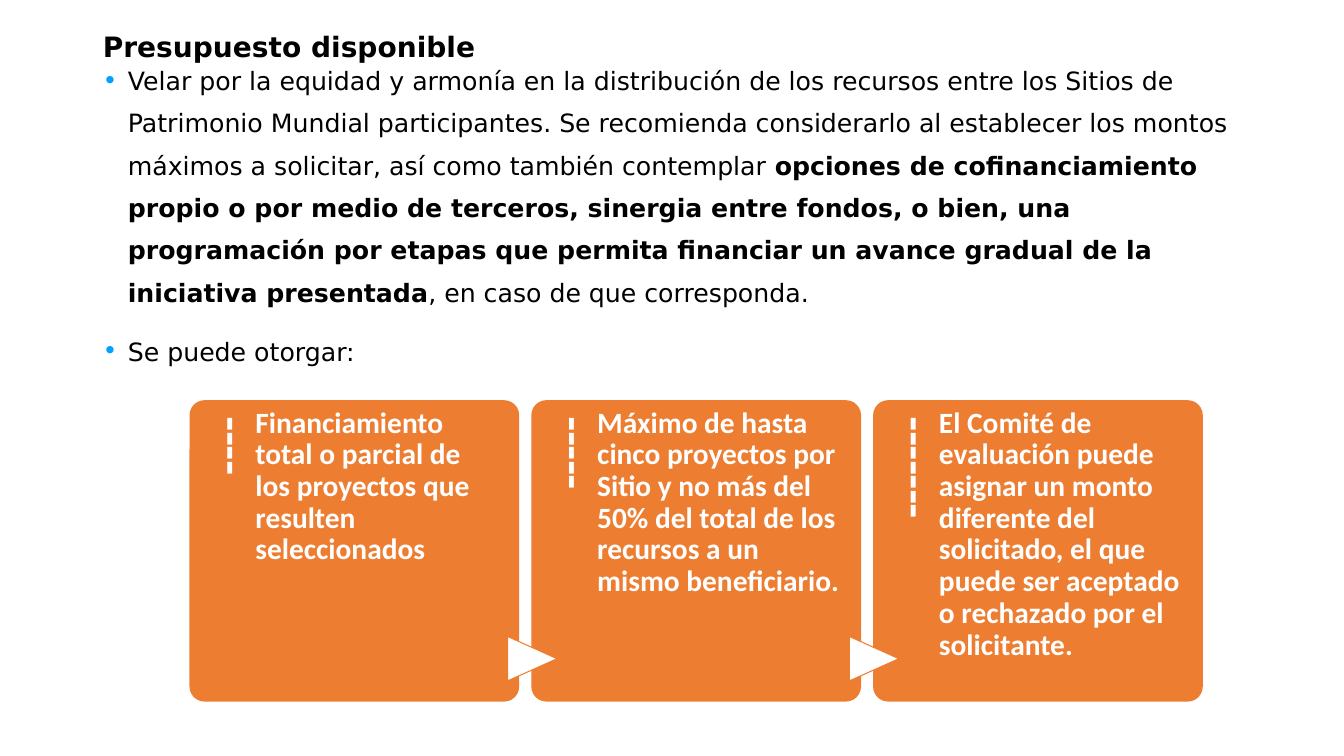
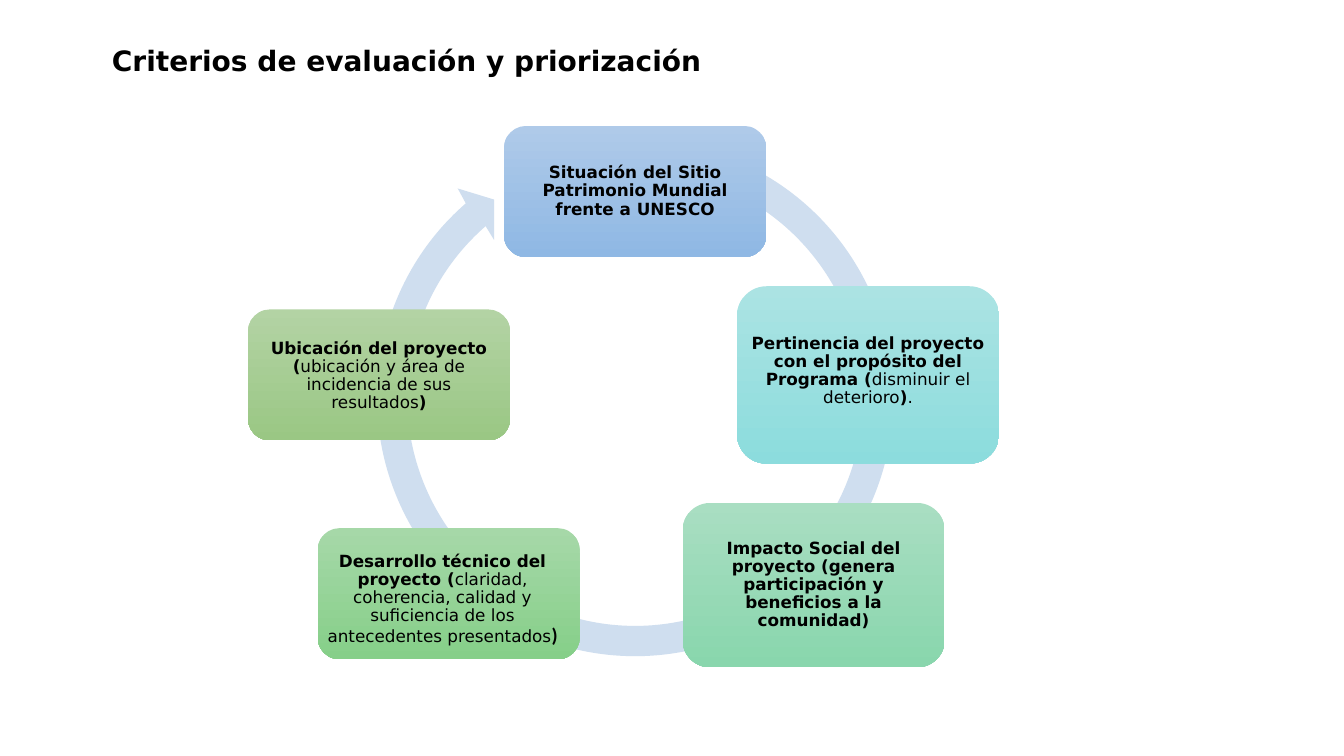
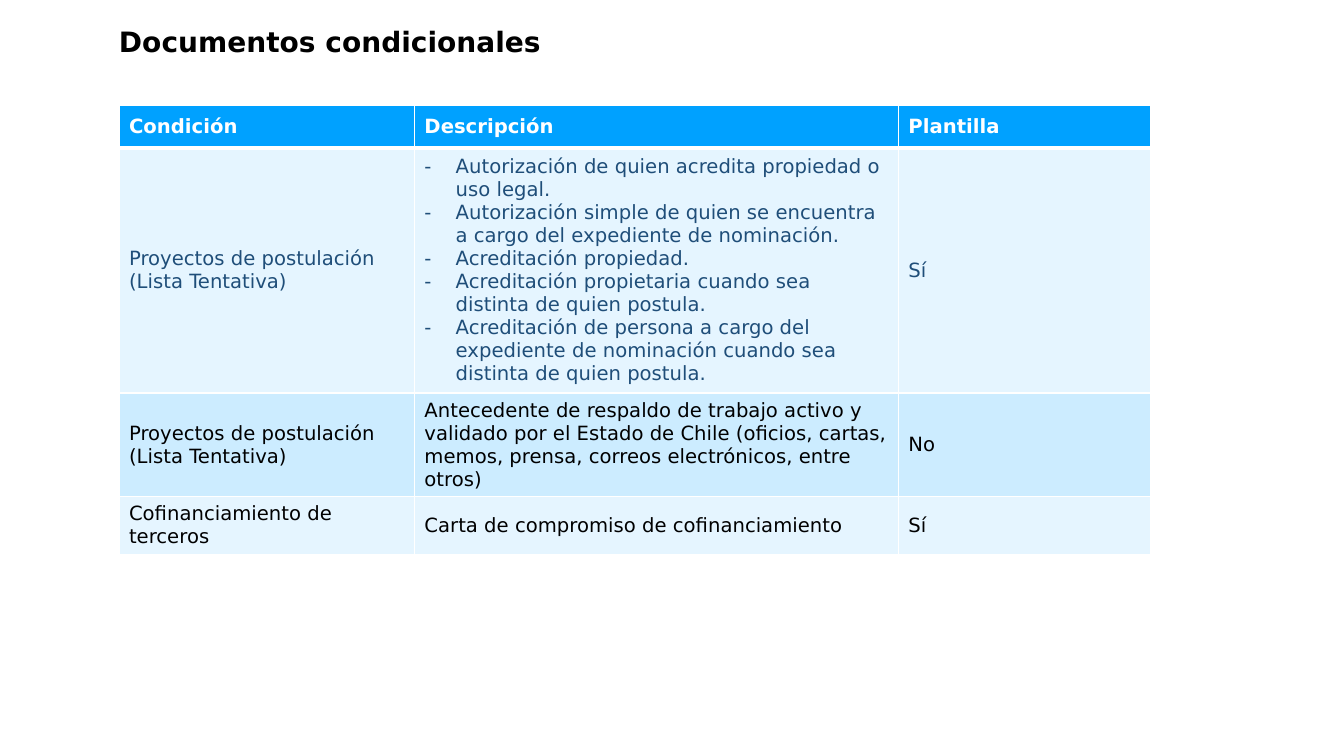
"""Build three slides on budget, evaluation criteria and conditional documents."""
from math import cos, radians, sin, tan

from lxml.etree import SubElement
from pptx import Presentation
from pptx.dml.color import RGBColor
from pptx.enum.shapes import MSO_SHAPE
from pptx.enum.text import MSO_ANCHOR, MSO_AUTO_SIZE, PP_ALIGN
from pptx.oxml import parse_xml
from pptx.oxml.ns import nsdecls, qn
from pptx.util import Inches, Pt

BLACK = RGBColor(0x00, 0x00, 0x00)
WHITE = RGBColor(0xFF, 0xFF, 0xFF)
ORANGE = RGBColor(0xED, 0x7D, 0x31)
BLUE = RGBColor(0x00, 0xA1, 0xFF)
NAVY = RGBColor(0x1F, 0x4E, 0x79)
PALE_BLUE = RGBColor(0xCF, 0xDE, 0xEF)
SANS, CALIBRI = "DejaVu Sans", "Calibri"

BUDGET_POINTS = [
    [("Velar por la equidad y armonía en la distribución de los recursos entre los Sitios de "
      "Patrimonio Mundial participantes. Se recomienda considerarlo al establecer los montos "
      "máximos a solicitar, así como también contemplar ", False),
     ("opciones de cofinanciamiento propio o por medio de terceros, sinergia entre fondos, o bien, "
      "una programación por etapas que permita financiar un avance gradual de la iniciativa "
      "presentada", True),
     (", en caso de que corresponda.", False)],
    [("Se puede otorgar:", False)],
]
FUNDING_CARDS = [
    ("----", "Financiamiento total o parcial de los proyectos que resulten seleccionados"),
    ("-----", "Máximo de hasta cinco proyectos por Sitio y no más del 50% del total de los recursos "
              "a un mismo beneficiario."),
    ("-------", "El Comité de evaluación puede asignar un monto diferente del solicitado, el que "
                "puede ser aceptado o rechazado por el solicitante."),
]
CRITERIA = [
    dict(at=(5, 1.25), height=1.3, side=0.06, shift=(0, 0), colors=("AFCAE9", "8FB8E4"),
         spans=[("Situación del Sitio Patrimonio Mundial frente a UNESCO", True)]),
    dict(at=(7.31, 2.84), height=1.76, side=0.03, shift=(0, -0.04), colors=("ABE3E3", "8CDCDD"),
         spans=[("Pertinencia del proyecto con el propósito del Programa (", True),
                ("disminuir el deterioro", False), (")", True), (".", False)]),
    dict(at=(6.77, 4.99), height=1.63, side=0.06, shift=(0, 0), colors=("A9DEC2", "89D6AD"),
         spans=[("Impacto Social del proyecto (genera participación y beneficios a la comunidad)",
                 True)]),
    dict(at=(3.15, 5.24), height=1.3, side=0.06, shift=(-0.06, 0.06), colors=("A6D8A8", "86CF89"),
         spans=[("Desarrollo técnico del proyecto (", True),
                ("claridad, coherencia, calidad y suficiencia de los antecedentes presentados",
                 False), (")", True, CALIBRI, 14)]),
    dict(at=(2.46, 3.07), height=1.3, side=0.06, shift=(0, 0.01), colors=("B3D3A4", "9AC784"),
         spans=[("Ubicación del proyecto (", True),
                ("ubicación y área de incidencia de sus resultados", False), (")", True)]),
]
CRITERION_WIDTH = 2.6
RING_CENTER, RING_OUTER, RING_INNER = (6.3, 3.95), 2.56, 2.26
RING_START, RING_END, RING_CURVES = -70, 229, 4
ARROW_HEAD = [(4.54, 1.87), (4.9, 1.98), (4.9, 2.38)]
UNITS_PER_INCH = 1000

APPLICATION = "Proyectos de postulación (Lista Tentativa)"
DOCUMENTS = [
    ("Condición", "Descripción", "Plantilla"),
    (APPLICATION, [
        "Autorización de quien acredita propiedad o uso legal.",
        "Autorización simple de quien se encuentra a cargo del expediente de nominación.",
        "Acreditación propiedad.",
        "Acreditación propietaria cuando sea distinta de quien postula.",
        "Acreditación de persona a cargo del expediente de nominación cuando sea distinta de quien "
        "postula."], "Sí"),
    (APPLICATION, "Antecedente de respaldo de trabajo activo y validado por el Estado de Chile "
                  "(oficios, cartas, memos, prensa, correos electrónicos, entre otros)", "No"),
    ("Cofinanciamiento de terceros", "Carta de compromiso de cofinanciamiento", "Sí"),
]
COLUMN_WIDTHS = (2.93, 4.8, 2.5)
ROW_HEIGHTS = (0.42, 2.43, 1.03, 0.57)
ROW_ALPHAS = (100, 10, 20, 10)
ROW_COLORS = (WHITE, NAVY, BLACK, BLACK)


def inches(*lengths):
    return [Inches(length) for length in lengths]


def set_frame(frame, left=0, top=0, right=0, bottom=0, anchor=MSO_ANCHOR.TOP):
    frame.word_wrap = True
    frame.auto_size = MSO_AUTO_SIZE.NONE
    frame.vertical_anchor = anchor
    frame.margin_left, frame.margin_top, frame.margin_right, frame.margin_bottom = inches(
        left, top, right, bottom)


def write(para, spans, size, color=BLACK, font=SANS, align=PP_ALIGN.LEFT, spacing=0.9):
    para.alignment = align
    para.line_spacing = spacing
    for text, bold, *special in spans:
        span = para.add_run()
        span.text = text
        span.font.name, points = special or (font, size)
        span.font.size = Pt(points)
        span.font.bold = bold
        span.font.color.rgb = color


def add_bullet(para, symbol, indent, color=None):
    properties = para._p.get_or_add_pPr()
    properties.set("marL", str(Inches(indent)))
    properties.set("indent", str(-Inches(indent)))
    if color is not None:
        SubElement(SubElement(properties, qn("a:buClr")), qn("a:srgbClr")).set("val", str(color))
    SubElement(properties, qn("a:buFont")).set("typeface", SANS)
    SubElement(properties, qn("a:buChar")).set("char", symbol)


def add_page(deck, title, left, middle):
    page = deck.slides.add_slide(deck.slide_layouts[5])
    box = page.shapes.title
    box.left, box.top, box.width, box.height = inches(left, middle - 0.25, 11.5, 0.5)
    set_frame(box.text_frame, anchor=MSO_ANCHOR.MIDDLE)
    write(box.text_frame.paragraphs[0], [(title, True)], 20)
    return page


def add_plain_shape(page, kind, left, top, width, height, fill=None):
    shape = page.shapes.add_shape(kind, *inches(left, top, width, height))
    shape.shadow.inherit = False
    shape.line.fill.background()
    if fill is not None:
        shape.fill.solid()
        shape.fill.fore_color.rgb = fill
    return shape


def build_budget(deck):
    page = add_page(deck, "Presupuesto disponible", 1.02, 0.48)
    frame = page.shapes.add_textbox(*inches(0.92, 0.48, 11.5, 2.65)).text_frame
    set_frame(frame, 0.1, 0.05, 0.1, 0.05)
    for index, spans in enumerate(BUDGET_POINTS):
        para = frame.add_paragraph() if index else frame.paragraphs[0]
        add_bullet(para, "•", 0.25, BLUE)
        if index:
            para.space_before = Pt(12)
        write(para, spans, 18, spacing=1.4)

    top, width, height, pitch = 3.97, 3.27, 2.99, 3.39
    for index, (dashes, text) in enumerate(FUNDING_CARDS):
        left = 1.88 + index * pitch
        card = add_plain_shape(page, MSO_SHAPE.ROUNDED_RECTANGLE, left, top, width, height, ORANGE)
        card.adjustments[0] = 0.05
        set_frame(card.text_frame, 0.61, 0.03, 0.13)
        write(card.text_frame.paragraphs[0], [(text, True)], 21, WHITE, CALIBRI)

        label = page.shapes.add_textbox(*inches(left - 0.91, top + 0.9, 2.46, 0.65))
        label.rotation = 270
        set_frame(label.text_frame, top=0.13, right=0.17)
        write(label.text_frame.paragraphs[0], [(dashes, True)], 34, WHITE, CALIBRI, PP_ALIGN.RIGHT)

        if index:
            arrow = add_plain_shape(page, MSO_SHAPE.FLOWCHART_EXTRACT, left - 0.21, top + 2.32,
                                    0.44, 0.49, WHITE)
            arrow.rotation = 90
            arrow.line.color.rgb = ORANGE
            arrow.line.width = Pt(0.75)


def arc_points(radius, start, end):
    """Return the start point, then three Bezier points for each curve."""
    step = radians(end - start) / RING_CURVES
    handle = 4 / 3 * tan(step / 4)
    center_x, center_y = RING_CENTER

    def place(angle, pull):
        return (center_x + radius * (cos(angle) - pull * sin(angle)),
                center_y + radius * (sin(angle) + pull * cos(angle)))

    points = [place(radians(start), 0)]
    for index in range(RING_CURVES):
        angle = radians(start) + index * step
        points += [place(angle, handle), place(angle + step, -handle), place(angle + step, 0)]
    return points


def bend_lines(lines):
    for first, second, third in zip(lines[::3], lines[1::3], lines[2::3]):
        curve = first.makeelement(qn("a:cubicBezTo"))
        first.addprevious(curve)
        for line in (first, second, third):
            curve.append(line[0])
            line.getparent().remove(line)


def add_ring(page):
    outer = arc_points(RING_OUTER, RING_START, RING_END)
    inner = arc_points(RING_INNER, RING_END, RING_START)
    outline = [(x * UNITS_PER_INCH, y * UNITS_PER_INCH) for x, y in outer + ARROW_HEAD + inner]
    builder = page.shapes.build_freeform(*outline[0], scale=Inches(1) / UNITS_PER_INCH)
    builder.add_line_segments(outline[1:], close=True)
    ring = builder.convert_to_shape()
    lines = list(ring._element.iter(qn("a:lnTo")))
    curve_lines = 3 * RING_CURVES
    bend_lines(lines[:curve_lines])
    inner_start = curve_lines + len(ARROW_HEAD) + 1
    bend_lines(lines[inner_start:inner_start + curve_lines])
    ring.shadow.inherit = False
    ring.fill.solid()
    ring.fill.fore_color.rgb = PALE_BLUE
    ring.line.fill.background()


def build_criteria(deck):
    page = add_page(deck, "Criterios de evaluación y priorización", 1.11, 0.62)
    add_ring(page)
    for criterion in CRITERIA:
        card = add_plain_shape(page, MSO_SHAPE.ROUNDED_RECTANGLE, *criterion["at"],
                               CRITERION_WIDTH, criterion["height"])
        card.adjustments[0] = 0.167
        card.fill.gradient()
        card.fill.gradient_angle = 270
        for stop, color in zip(card.fill.gradient_stops, criterion["colors"]):
            stop.color.rgb = RGBColor.from_string(color)
        across, down = criterion["shift"]
        side = criterion["side"]
        set_frame(card.text_frame, side + across, 0.06 + down, side - across, 0.06 - down,
                  MSO_ANCHOR.MIDDLE)
        write(card.text_frame.paragraphs[0], criterion["spans"], 12, align=PP_ALIGN.CENTER)


def style_cell(cell, alpha, top_line, bottom_line):
    cell.vertical_anchor = MSO_ANCHOR.MIDDLE
    cell.fill.solid()
    cell.fill.fore_color.rgb = BLUE
    properties = cell._tc.get_or_add_tcPr()
    if alpha < 100:
        color = properties.find(qn("a:solidFill")).find(qn("a:srgbClr"))
        SubElement(color, qn("a:alpha")).set("val", str(alpha * 1000))
    borders = (("lnL", 1), ("lnR", 1), ("lnT", top_line), ("lnB", bottom_line))
    for position, (side, points) in enumerate(borders):
        properties.insert(position, parse_xml(
            f'<a:{side} {nsdecls("a")} w="{Pt(points)}"><a:solidFill>'
            f'<a:srgbClr val="{WHITE}"/></a:solidFill></a:{side}>'))


def build_documents(deck):
    page = add_page(deck, "Documentos condicionales", 1.18, 0.43)
    table = page.shapes.add_table(
        len(DOCUMENTS), len(COLUMN_WIDTHS),
        *inches(1.18, 1.05, sum(COLUMN_WIDTHS), sum(ROW_HEIGHTS))).table
    table.horz_banding = False
    for column, width in zip(table.columns, COLUMN_WIDTHS):
        column.width = Inches(width)
    for index, entries in enumerate(DOCUMENTS):
        table.rows[index].height = Inches(ROW_HEIGHTS[index])
        for cell, entry in zip(table.rows[index].cells, entries):
            style_cell(cell, ROW_ALPHAS[index], 3 if index == 1 else 1, 1 if index else 3)
            is_list = isinstance(entry, list)
            for number, text in enumerate(entry if is_list else [entry]):
                frame = cell.text_frame
                para = frame.add_paragraph() if number else frame.paragraphs[0]
                if is_list:
                    add_bullet(para, "-", 0.31)
                write(para, [(text, index == 0)], 14, ROW_COLORS[index], spacing=1.0)


def main():
    deck = Presentation()
    deck.slide_width, deck.slide_height = inches(13.33, 7.5)
    build_budget(deck)
    build_criteria(deck)
    build_documents(deck)
    deck.save("out.pptx")


if __name__ == "__main__":
    main()
